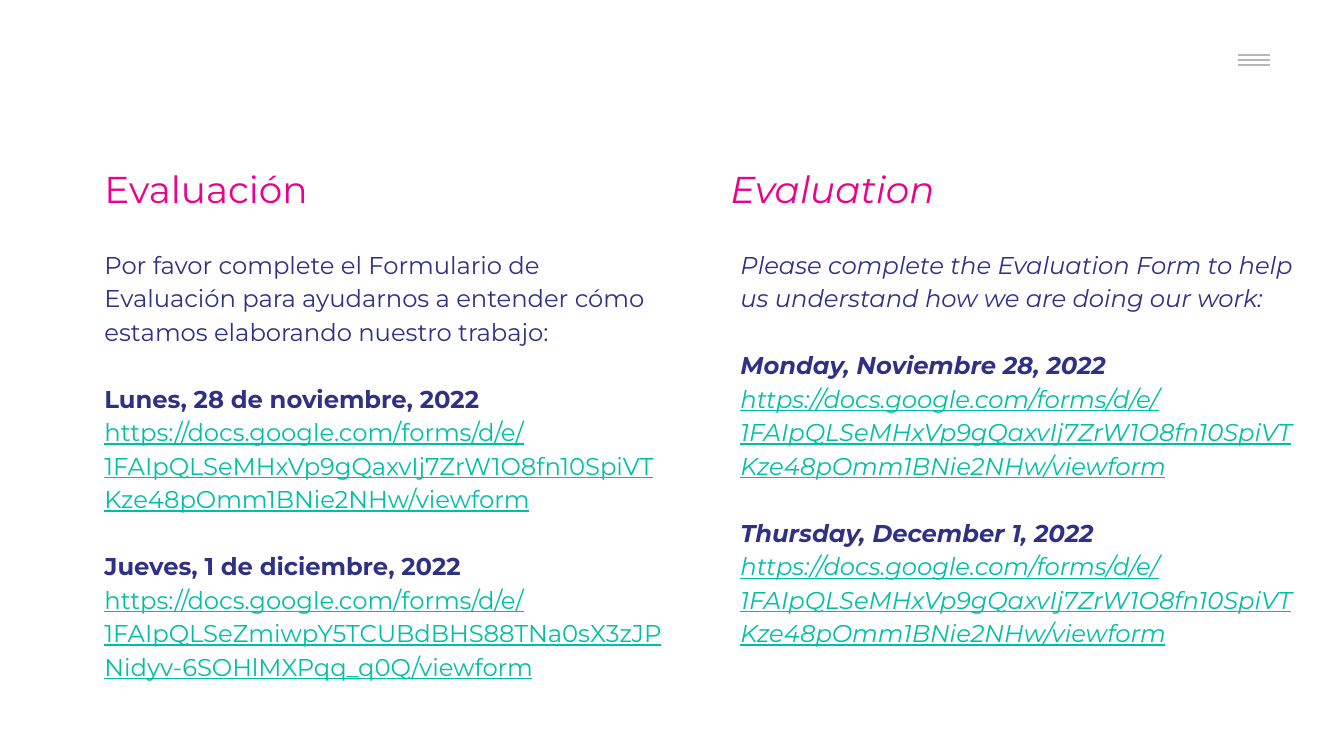
from lxml import etree
from pptx import Presentation
from pptx import util as u
from pptx.dml.color import RGBColor
from pptx.enum import shapes, text
from pptx.oxml.ns import qn

COLORS = {"heading": "EC008C", "body": "313087", "link": "00BFA5",
          "menu": "B7B7B7", "panel": "FFFFFF"}
FONT = "Montserrat"
FORMS = "https://docs.google.com/forms/d/e/"
MONDAY_FORM = FORMS + "1FAIpQLSeMHxVp9gQaxvIj7ZrW1O8fn10SpiVTKze48pOmm1BNie2NHw/viewform"
THURSDAY_FORM = FORMS + "1FAIpQLSeZmiwpY5TCUBdBHS88TNa0sX3zJPNidyv-6SOHlMXPqq_q0Q/viewform"

LANGUAGES = [
    {
        "heading": "Evaluación",
        "request": "Por favor complete el Formulario de Evaluación para ayudarnos "
                   "a entender cómo estamos elaborando nuestro trabajo:",
        "sessions": [("Lunes, 28 de noviembre, 2022", MONDAY_FORM),
                     ("Jueves, 1 de diciembre, 2022", THURSDAY_FORM)],
        "italic": False,
        "holders": (0, 2),
        "heading_box": (91, 153, 567, 79),
        "body_box": (91, 232, 589, 133),
    },
    {
        "heading": "Evaluation",
        "request": "Please complete the Evaluation Form to help us understand "
                   "how we are doing our work:",
        "sessions": [("Monday, Noviembre 28, 2022", MONDAY_FORM),
                     ("Thursday, December 1, 2022", MONDAY_FORM)],
        "italic": True,
        "holders": (3, 4),
        "heading_box": (717, 153, 567, 79),
        "body_box": (727, 232, 582, 405),
    },
]
MENU_PANEL = (1191, 23, 126, 67)
MENU_LEFT, MENU_RIGHT, MENU_TOP, MENU_STEP, MENU_BARS = 1238, 1270, 55, 5, 3


def px(length):
    return u.Emu(round(length * 914400 / 134.4))


def fill_panel(panel):
    panel.fill.solid()
    panel.fill.fore_color.rgb = RGBColor.from_string(COLORS["panel"])


def fill_holder(holder, box, lines, size, spacing, italic):
    holder.left, holder.top, holder.width, holder.height = map(px, box)
    frame = holder.text_frame
    frame.word_wrap = True
    frame.auto_size = text.MSO_AUTO_SIZE.NONE
    frame.vertical_anchor = text.MSO_ANCHOR.TOP
    frame.margin_left = frame.margin_right = u.Inches(0.1)
    frame.margin_top = frame.margin_bottom = u.Inches(0.1)
    for number, (wording, role, bold, gap) in enumerate(lines):
        line = frame.add_paragraph() if number else frame.paragraphs[0]
        line.text = wording
        line.alignment = text.PP_ALIGN.LEFT
        line.line_spacing = spacing
        line.space_before = u.Pt(gap)
        properties = line._p.get_or_add_pPr()
        properties.set("marL", "0")
        properties.set("indent", "0")
        etree.SubElement(properties, qn("a:buNone"))
        font = line.font
        font.name, font.size = FONT, u.Pt(size)
        font.bold, font.italic = bold, italic
        font.underline = role == "link"
        font.color.rgb = RGBColor.from_string(COLORS[role])


deck = Presentation()
deck.slide_width, deck.slide_height = px(1344), px(756)
slide = deck.slides.add_slide(deck.slide_layouts.get_by_name("Comparison"))
holders = {holder.placeholder_format.idx: holder for holder in slide.placeholders}

menu_panel = slide.shapes.add_shape(shapes.MSO_SHAPE.RECTANGLE, *map(px, MENU_PANEL))
menu_panel.shadow.inherit = False
menu_panel.line.fill.background()
fill_panel(menu_panel)

for bar in range(MENU_BARS):
    y = px(MENU_TOP + bar * MENU_STEP)
    menu_bar = slide.shapes.add_connector(
        shapes.MSO_CONNECTOR.STRAIGHT, px(MENU_LEFT), y, px(MENU_RIGHT), y)
    menu_bar.line.color.rgb = RGBColor.from_string(COLORS["menu"])
    menu_bar.line.width = u.Pt(0.75)
    etree.SubElement(menu_bar._element.spPr, qn("a:effectLst"))

for language in LANGUAGES:
    heading, body = (holders.pop(idx) for idx in language["holders"])
    fill_holder(heading, language["heading_box"],
                [(language["heading"], "heading", False, 0)], 20, 1.0, language["italic"])
    fill_panel(heading)
    lines = [(language["request"], "body", False, 0)]
    for date, link in language["sessions"]:
        lines += [(date, "body", True, 18), (link, "link", False, 0)]
    fill_holder(body, language["body_box"], lines, 13, 1.15, language["italic"])

for unused in holders.values():
    unused._element.getparent().remove(unused._element)

deck.save("out.pptx")
